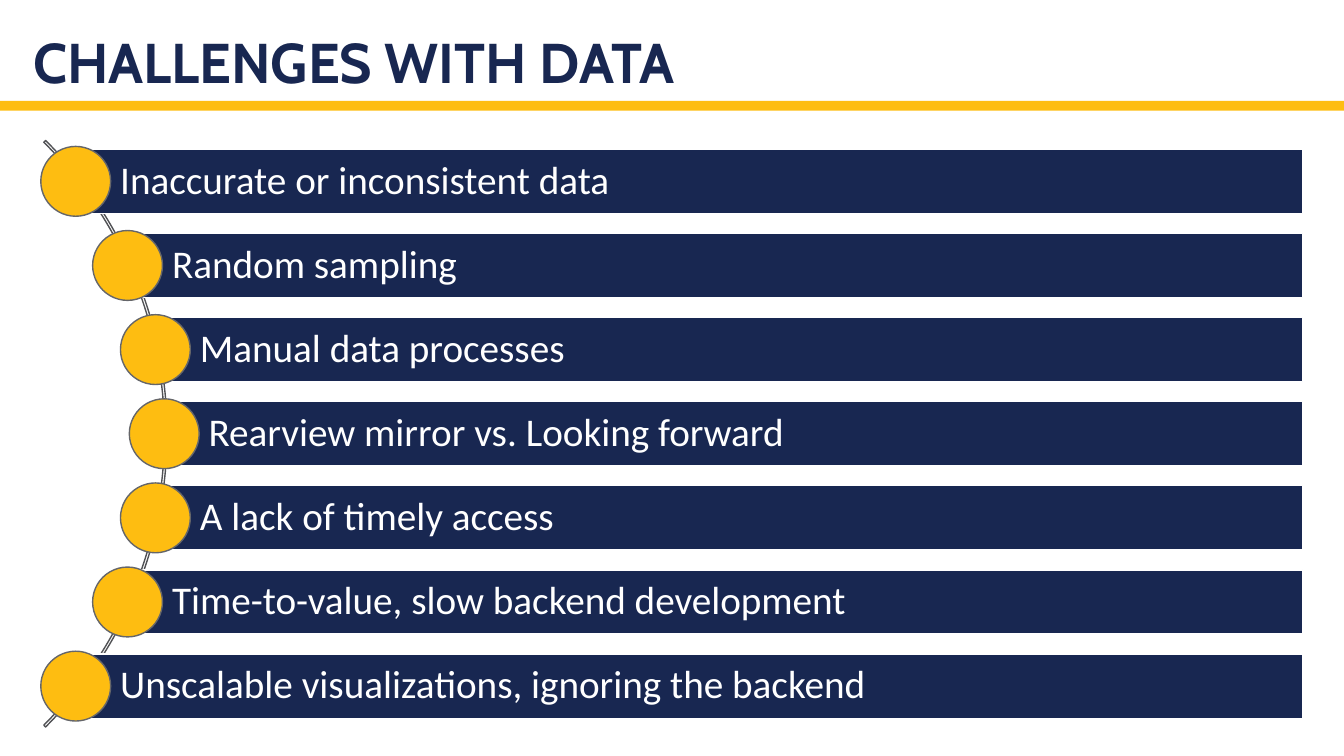
import math

import pptx
import pptx.dml.color
import pptx.enum.shapes
import pptx.enum.text
import pptx.util

Cm = pptx.util.Cm
Pt = pptx.util.Pt
RGBColor = pptx.dml.color.RGBColor
SHAPE = pptx.enum.shapes.MSO_SHAPE
ANCHOR = pptx.enum.text.MSO_ANCHOR
ALIGN = pptx.enum.text.PP_ALIGN

NAVY = RGBColor(0x18, 0x27, 0x51)
GOLD = RGBColor(0xFE, 0xBD, 0x11)
WHITE = RGBColor(0xFF, 0xFF, 0xFF)
ARC_GRAY = RGBColor(0x51, 0x52, 0x55)
DOT_GRAY = RGBColor(0x65, 0x66, 0x6A)

CHALLENGES = [
    "Inaccurate or inconsistent data",
    "Random sampling",
    "Manual data processes",
    "Rearview mirror vs. Looking forward",
    "A lack of timely access",
    "Time-to-value, slow backend development",
    "Unscalable visualizations, ignoring the backend",
]

# List geometry in centimetres: the dots sit on a circle
MIDDLE_Y = 10.93
ROW_STEP = 2.12
CURVE_X = -6.04
CURVE_RADIUS = 10.18
BAR_RIGHT = 32.82
BAR_HEIGHT = 1.62
DOT_SIZE = 1.76
ARC_LEFT = -16.69
ARC_SIZE = 20.9


def add_figure(slide, kind, left, top, width, height, fill=None, line=None):
    figure = slide.shapes.add_shape(kind, Cm(left), Cm(top), Cm(width), Cm(height))
    figure.shadow.inherit = False
    if fill is None:
        figure.fill.background()
    else:
        figure.fill.solid()
        figure.fill.fore_color.rgb = fill
    if line is None:
        figure.line.fill.background()
    else:
        figure.line.color.rgb = line
        figure.line.width = Pt(1)
    return figure


def write_line(holder, wording, margins, anchor, font_name, size, color, bold=False):
    frame = holder.text_frame
    frame.word_wrap = True
    frame.vertical_anchor = anchor
    (frame.margin_left, frame.margin_top,
     frame.margin_right, frame.margin_bottom) = [Cm(margin) for margin in margins]
    frame.text = wording
    paragraph = frame.paragraphs[0]
    paragraph.alignment = ALIGN.LEFT
    paragraph.line_spacing = 0.9
    font = paragraph.runs[0].font
    font.name = font_name
    font.size = Pt(size)
    font.bold = bold
    font.color.rgb = color


def add_heading(slide):
    add_figure(slide, SHAPE.RECTANGLE, 0, 2.54, 33.87, 0.25, GOLD)
    heading = slide.shapes.add_textbox(Cm(0.84), Cm(0), Cm(32.18), Cm(2.54))
    write_line(heading, "CHALLENGES WITH DATA", (0, 0.13, 0, 0.13),
               ANCHOR.BOTTOM, "Cabin", 40, NAVY, True)


def add_arc(slide):
    arc = add_figure(slide, SHAPE.BLOCK_ARC, ARC_LEFT, MIDDLE_Y - ARC_SIZE / 2,
                     ARC_SIZE, ARC_SIZE, line=ARC_GRAY)
    # Start angle, end angle and thickness
    for index, value in enumerate((189, 27, 0.003)):
        arc.adjustments[index] = value


def add_challenge(slide, row, wording):
    offset = (row - (len(CHALLENGES) - 1) / 2) * ROW_STEP
    x = CURVE_X + math.sqrt(CURVE_RADIUS ** 2 - offset ** 2)
    y = MIDDLE_Y + offset
    bar = add_figure(slide, SHAPE.RECTANGLE, x, y - BAR_HEIGHT / 2,
                     BAR_RIGHT - x, BAR_HEIGHT, NAVY, WHITE)
    write_line(bar, wording, (1.12, 0.2, 0.2, 0.2), ANCHOR.MIDDLE,
               "Calibri", 28, WHITE)
    add_figure(slide, SHAPE.OVAL, x - DOT_SIZE / 2, y - DOT_SIZE / 2,
               DOT_SIZE, DOT_SIZE, GOLD, DOT_GRAY)


def main():
    deck = pptx.Presentation()
    deck.slide_width = Cm(33.87)
    deck.slide_height = Cm(19.05)
    slide = deck.slides.add_slide(deck.slide_layouts[6])

    # Title and rule
    add_heading(slide)

    # Curved list of challenges
    add_arc(slide)
    for row, wording in enumerate(CHALLENGES):
        add_challenge(slide, row, wording)

    deck.save("out.pptx")


if __name__ == "__main__":
    main()
